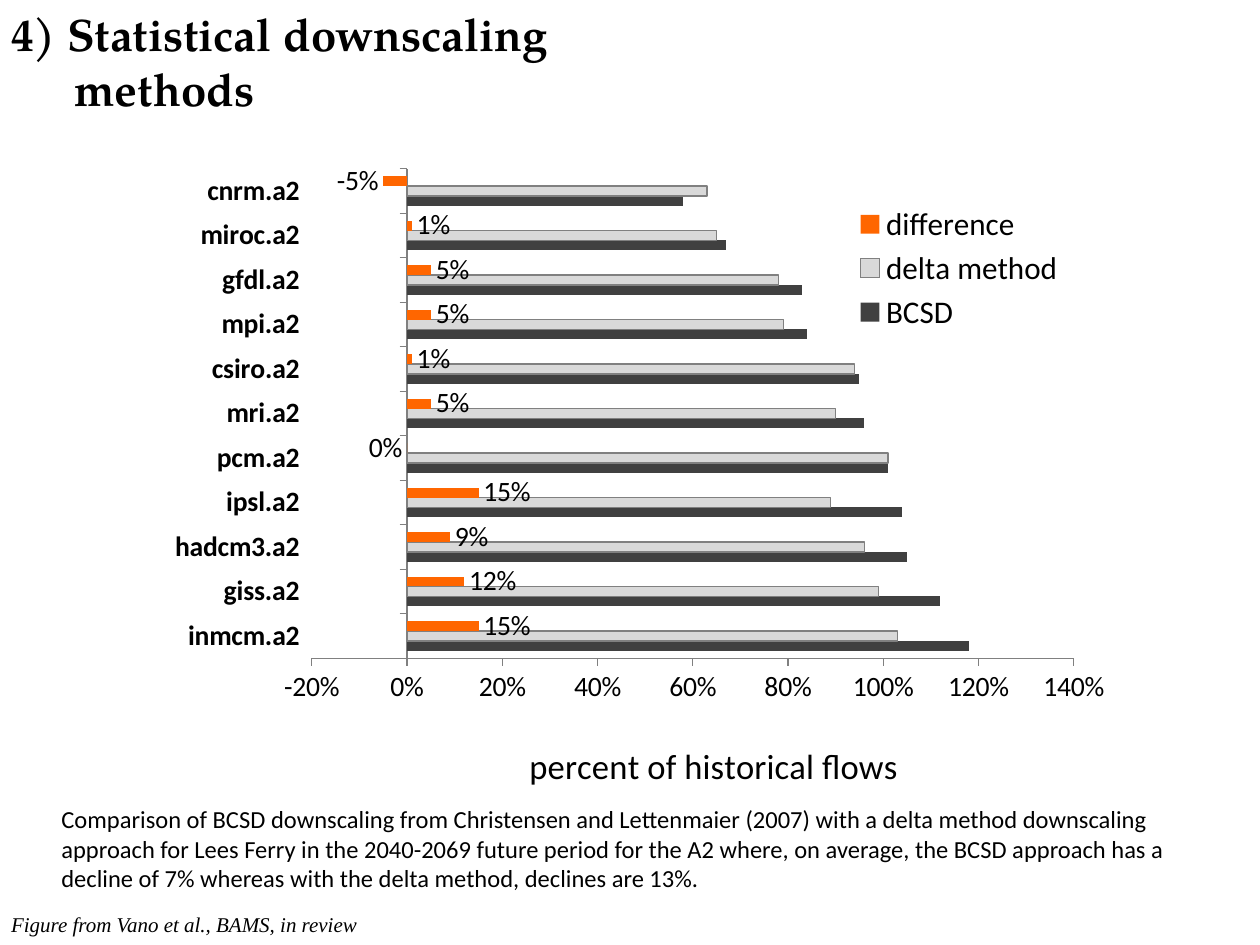
from dataclasses import dataclass
from typing import Optional

from lxml.etree import SubElement
from pptx import Presentation
from pptx.chart.data import CategoryChartData
from pptx.dml.color import RGBColor
from pptx.enum.chart import (XL_CHART_TYPE, XL_LABEL_POSITION, XL_LEGEND_POSITION,
                             XL_TICK_LABEL_POSITION, XL_TICK_MARK)
from pptx.oxml.ns import qn
from pptx.util import Pt


@dataclass(frozen=True)
class Theme:
    ink: str = "000000"
    axis: str = "808080"
    bcsd: str = "404040"
    delta: str = "D9D9D9"
    difference: str = "FF6600"
    body_font: str = "Calibri"
    title_font: str = "TeX Gyre Pagella"
    credit_font: str = "Times New Roman"
    title: float = 26
    axis_title: float = 20
    legend: float = 18
    ticks: float = 16
    caption: float = 14
    credit: float = 12


@dataclass(frozen=True)
class Box:
    left: float
    top: float
    width: float
    height: float


@dataclass(frozen=True)
class Passage:
    text: str
    box: Box
    font: str
    size: float
    bold: bool = False
    italic: bool = False
    wrap: bool = True
    hanging: float = 0


@dataclass(frozen=True)
class Method:
    name: str
    flows: tuple
    fill: str
    outline: Optional[str] = None


THEME = Theme()

MODELS = ("inmcm.a2", "giss.a2", "hadcm3.a2", "ipsl.a2", "pcm.a2", "mri.a2",
          "csiro.a2", "mpi.a2", "gfdl.a2", "miroc.a2", "cnrm.a2")

METHODS = (
    Method("BCSD", (1.18, 1.12, 1.05, 1.04, 1.01, 0.96, 0.95, 0.84, 0.83, 0.67, 0.58),
           THEME.bcsd),
    Method("delta method",
           (1.03, 0.99, 0.96, 0.89, 1.01, 0.9, 0.94, 0.79, 0.78, 0.65, 0.63),
           THEME.delta, THEME.axis),
    Method("difference",
           (0.15, 0.12, 0.09, 0.15, 0, 0.05, 0.01, 0.05, 0.05, 0.01, -0.05),
           THEME.difference),
)

PASSAGES = (
    Passage("Comparison of BCSD downscaling from Christensen and Lettenmaier (2007) with a "
            "delta method downscaling approach for Lees Ferry in the 2040-2069 future period "
            "for the A2 where, on average, the BCSD approach has a decline of 7% whereas with "
            "the delta method, declines are 13%.",
            Box(28, 456, 673, 58), THEME.body_font, THEME.caption),
    Passage("Figure from Vano et al., BAMS, in review", Box(-0.7, 517.5, 219, 22),
            THEME.credit_font, THEME.credit, italic=True, wrap=False),
    Passage("4) Statistical downscaling methods", Box(-0.7, 0, 410, 39),
            THEME.title_font, THEME.title, bold=True, hanging=36),
)


def set_font(font, size: float, bold: bool = False, name: str = THEME.body_font) -> None:
    font.name = name
    font.size = Pt(size)
    font.bold = bold
    font.color.rgb = RGBColor.from_string(THEME.ink)


def set_layout(parent, index: int, inner: bool = False, **fractions: float) -> None:
    for old in parent.findall(qn("c:layout")):
        parent.remove(old)
    layout = SubElement(parent, qn("c:layout"))
    manual = SubElement(layout, qn("c:manualLayout"))
    if inner:
        SubElement(manual, qn("c:layoutTarget")).set("val", "inner")
    for mode in ("xMode", "yMode"):
        SubElement(manual, qn(f"c:{mode}")).set("val", "edge")
    for side, fraction in fractions.items():
        SubElement(manual, qn(f"c:{side}")).set("val", str(fraction))
    parent.insert(index, layout)


def add_passage(slide, passage: Passage) -> None:
    box = passage.box
    frame = slide.shapes.add_textbox(Pt(box.left), Pt(box.top),
                                     Pt(box.width), Pt(box.height)).text_frame
    frame.word_wrap = passage.wrap
    paragraph = frame.paragraphs[0]
    if passage.hanging:
        properties = paragraph._p.get_or_add_pPr()
        properties.set("marL", str(Pt(passage.hanging)))
        properties.set("indent", str(-Pt(passage.hanging)))
    run = paragraph.add_run()
    run.text = passage.text
    set_font(run.font, passage.size, passage.bold, passage.font)
    run.font.italic = passage.italic


def style_axis(axis, bold: bool = False) -> None:
    axis.has_major_gridlines = False
    axis.major_tick_mark = XL_TICK_MARK.OUTSIDE
    axis.minor_tick_mark = XL_TICK_MARK.NONE
    axis.format.line.color.rgb = RGBColor.from_string(THEME.axis)
    axis.format.line.width = Pt(0.75)
    set_font(axis.tick_labels.font, THEME.ticks, bold)


def style_method(series, method: Method) -> None:
    series.invert_if_negative = False
    series.format.fill.solid()
    series.format.fill.fore_color.rgb = RGBColor.from_string(method.fill)
    if method.outline:
        series.format.line.color.rgb = RGBColor.from_string(method.outline)
        series.format.line.width = Pt(0.75)
    else:
        series.format.line.fill.background()


def label_differences(series) -> None:
    labels = series.data_labels
    labels.show_value = True
    labels.number_format = "0%"
    labels.number_format_is_linked = False
    labels.position = XL_LABEL_POSITION.OUTSIDE_END
    set_font(labels.font, THEME.ticks)
    unchanged = series.points[MODELS.index("pcm.a2")].data_label
    set_font(unchanged.font, THEME.ticks)
    unchanged.position = XL_LABEL_POSITION.INSIDE_END


def add_flow_chart(slide, box: Box) -> None:
    flows = CategoryChartData(number_format="0%")
    flows.categories = MODELS
    for method in METHODS:
        flows.add_series(method.name, method.flows)
    chart = slide.shapes.add_chart(XL_CHART_TYPE.BAR_CLUSTERED, Pt(box.left), Pt(box.top),
                                   Pt(box.width), Pt(box.height), flows).chart
    chart.has_title = False
    set_font(chart.font, 10)
    bars = chart.plots[0]
    bars.gap_width = 150
    bars.overlap = 0
    bars.vary_by_categories = False
    for series, method in zip(bars.series, METHODS):
        style_method(series, method)
    label_differences(bars.series[-1])

    style_axis(chart.category_axis, bold=True)
    chart.category_axis.tick_label_position = XL_TICK_LABEL_POSITION.LOW
    percent = chart.value_axis
    style_axis(percent)
    percent.minimum_scale, percent.maximum_scale, percent.major_unit = -0.2, 1.4, 0.2
    percent.tick_labels.number_format = "0%"
    percent.tick_labels.number_format_is_linked = False
    run = percent.axis_title.text_frame.paragraphs[0].add_run()
    run.text = "percent of historical flows"
    set_font(run.font, THEME.axis_title)

    chart.has_legend = True
    chart.legend.position = XL_LEGEND_POSITION.RIGHT
    chart.legend.include_in_layout = False
    set_font(chart.legend.font, THEME.legend)
    set_layout(chart._chartSpace.chart.plotArea, 0, inner=True, x=0.14, y=0.04, w=0.83, h=0.64)
    set_layout(chart.legend._element, 1, x=0.73, y=0.08, w=0.23, h=0.18)
    set_layout(percent.axis_title._element, 1, x=0.37, y=0.78)


def main() -> None:
    deck = Presentation()
    deck.slide_width, deck.slide_height = Pt(720), Pt(540)
    slide = deck.slides.add_slide(deck.slide_layouts[6])
    add_flow_chart(slide, Box(100, 79, 531, 437))
    for passage in PASSAGES:
        add_passage(slide, passage)
    deck.save("out.pptx")


if __name__ == "__main__":
    main()
